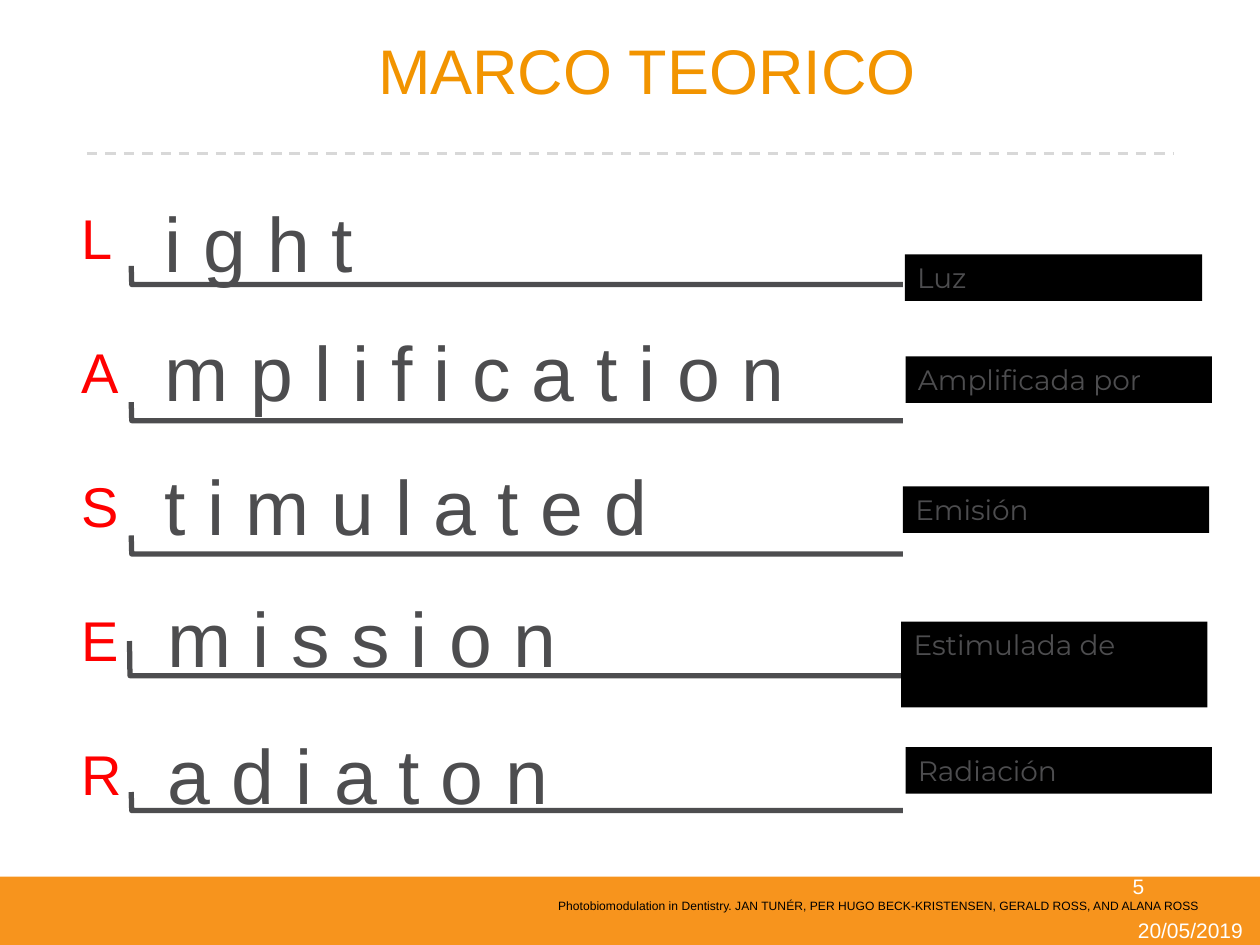
import pptx
import pptx.util
import pptx.dml.color
import pptx.enum.dml
import pptx.enum.shapes
import pptx.enum.text
import pptx.oxml.ns
from lxml import etree

Pt = pptx.util.Pt
CENTER = pptx.enum.text.PP_ALIGN.CENTER
TOP = pptx.enum.text.MSO_ANCHOR.TOP
MIDDLE = pptx.enum.text.MSO_ANCHOR.MIDDLE
ORANGE, GRAY, RED, BLACK, WHITE = "F7941D", "4D4D4F", "FF0000", "000000", "FFFFFF"

# word (left, top, width), bracket (left, top, height), translation (left, top, width, height)
ACRONYM_ROWS = [
    ("i g h t", (87, 105.8, 276), (75, 152, 10.6), "Luz", (517, 145.4, 170, 26.6)),
    ("m p l i f i c a t i o n", (87, 179.3, 416), (75, 229.8, 10.6),
     "Amplificada por", (517.5, 203.6, 175, 26.6)),
    ("t i m u l a t e d", (87, 255.6, 416), (75, 306, 10.6),
     "Emisión", (516, 278, 175, 26.6)),
    ("m i s s i o n", (88.6, 331.2, 416), (74, 366.3, 19.8),
     "Estimulada de", (515, 355.2, 175, 49)),
    ("a d i a t o n", (88.6, 409.7, 416), (75, 452.6, 10.6),
     "Radiación", (517.5, 427, 175, 26.6)),
]


def rgb(hex_color):
    return pptx.dml.color.RGBColor.from_string(hex_color)


def write(shape, text, size, color, font="Arial", align=None, anchor=TOP, spacing=None):
    frame = shape.text_frame
    frame.word_wrap = True
    frame.vertical_anchor = anchor
    frame.text = text
    paragraph = frame.paragraphs[0]
    paragraph.alignment = align or pptx.enum.text.PP_ALIGN.LEFT
    if spacing:
        paragraph.line_spacing = spacing
    run = paragraph.runs[0]
    run.font.name = font
    run.font.size = Pt(size)
    run.font.color.rgb = rgb(color)
    return run


def add_text(slide, box, text, size, color, **style):
    textbox = slide.shapes.add_textbox(*map(Pt, box))
    return write(textbox, text, size, color, **style)


def add_block(slide, box, color):
    block = slide.shapes.add_shape(
        pptx.enum.shapes.MSO_SHAPE.RECTANGLE, *map(Pt, box))
    block.shadow.inherit = False
    block.fill.solid()
    block.fill.fore_color.rgb = rgb(color)
    block.line.fill.background()
    return block


def add_bracket(slide, left, top, height):
    """Short upright followed by the long rule under a word."""
    builder = slide.shapes.build_freeform(Pt(left), Pt(top))
    bottom = Pt(top + height)
    builder.add_line_segments(
        [(Pt(left + 0.3), bottom), (Pt(left + 441), bottom)], close=False)
    bracket = builder.convert_to_shape()
    bracket.shadow.inherit = False
    bracket.fill.background()
    bracket.line.color.rgb = rgb(GRAY)
    bracket.line.width = Pt(3)


def add_divider(slide):
    divider = slide.shapes.add_connector(
        pptx.enum.shapes.MSO_CONNECTOR.STRAIGHT, Pt(49.7), Pt(87.8), Pt(670.3), Pt(87.8))
    divider.line.color.rgb = rgb("D8D8D8")
    divider.line.width = Pt(1.5)
    divider.line.dash_style = pptx.enum.dml.MSO_LINE.DASH
    properties = divider.element.find(pptx.oxml.ns.qn("p:spPr"))
    etree.SubElement(properties, pptx.oxml.ns.qn("a:effectLst"))


def add_footer(slide):
    add_block(slide, (0, 501, 720, 39), ORANGE)
    add_text(slide, (642, 524, 76.5, 15), "20/05/2019", 12, WHITE,
             align=CENTER, anchor=MIDDLE)
    add_text(slide, (612.7, 495.5, 75.6, 21.6), "5", 12, WHITE,
             align=CENTER, anchor=MIDDLE)
    citation = add_text(
        slide, (311.8, 508.3, 395.3, 31.7),
        "Photobiomodulation in Dentistry. JAN TUNÉR, PER HUGO BECK-KRISTENSEN, "
        "GERALD ROSS, AND ALANA ROSS", 12, BLACK)
    citation.font.element.set("baseline", "30000") if hasattr(
        citation.font, "element") else citation._r.get_or_add_rPr().set("baseline", "30000")


def main():
    presentation = pptx.Presentation()
    presentation.slide_width, presentation.slide_height = Pt(720), Pt(540)
    slide = presentation.slides.add_slide(presentation.slide_layouts[6])

    add_footer(slide)
    add_divider(slide)
    add_text(slide, (97.2, 12, 545, 54.7), "MARCO TEORICO", 36, "F29400",
             align=CENTER, anchor=MIDDLE)
    # The narrow box wraps the acronym into one letter per line.
    add_text(slide, (39.6, 113, 21.6, 356.4), "L A S E R", 32, RED, spacing=Pt(38.3))
    for word, (left, top, width), bracket, translation, label_box in ACRONYM_ROWS:
        add_bracket(slide, *bracket)
        label = add_block(slide, label_box, BLACK)
        write(label, translation, 16, GRAY, font="Montserrat")
        add_text(slide, (left, top, width, 60.5), word, 44, GRAY, spacing=1.05)

    presentation.save("out.pptx")


if __name__ == "__main__":
    main()
